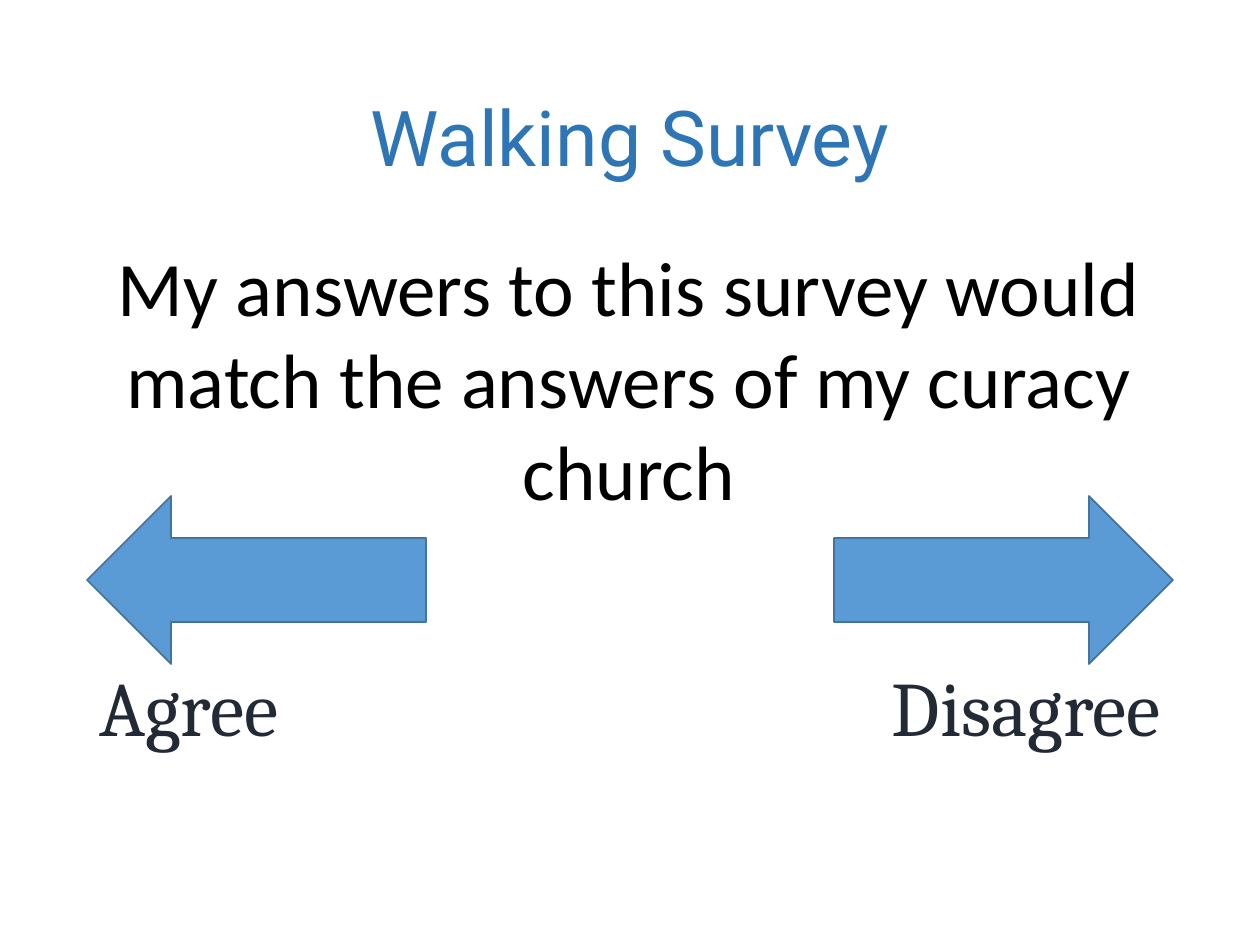
import pptx
import pptx.dml.color
import pptx.enum.shapes
import pptx.enum.text
import pptx.util

PX = 914400 / 126
RGB = pptx.dml.color.RGBColor
TITLE = RGB(0x2E, 0x75, 0xB6)
INK = RGB(0x22, 0x2A, 0x35)
BLACK = RGB(0x00, 0x00, 0x00)
BLUE = RGB(0x5B, 0x9B, 0xD5)
EDGE = RGB(0x43, 0x73, 0x9E)
ALIGN = pptx.enum.text.PP_ALIGN
ANCHOR = pptx.enum.text.MSO_ANCHOR


def scale(*box):
    """Turn px lengths into EMU."""
    return [pptx.util.Emu(round(n * PX)) for n in box]


def label(slide, box, text, face, color, align, lead=0.9, anchor=ANCHOR.TOP):
    """Place one wrapped line of text in a box."""
    frame = slide.shapes.add_textbox(*scale(*box)).text_frame
    frame.word_wrap = True
    frame.vertical_anchor = anchor
    para = frame.paragraphs[0]
    para.text = text
    para.alignment = align
    para.line_spacing = lead
    para.font.name = face
    para.font.size = pptx.util.Pt(44)
    para.font.color.rgb = color


def arrow(slide, box, turn):
    """Place a block arrow turned by some degrees."""
    kind = pptx.enum.shapes.MSO_SHAPE.RIGHT_ARROW
    shape = slide.shapes.add_shape(kind, *scale(*box))
    shape.rotation = turn
    shape.shadow.inherit = False
    shape.fill.solid()
    shape.fill.fore_color.rgb = BLUE
    shape.line.color.rgb = EDGE
    shape.line.width = pptx.util.Pt(1)


def heading(slide, x, y, w, h):
    """Place the title above the survey statement."""
    label(slide, (x, y, w, 183), "Walking Survey", "Roboto", TITLE,
          ALIGN.CENTER, anchor=ANCHOR.MIDDLE)
    text = "My answers to this survey would match the answers of my curacy church"
    label(slide, (x, y + 183, w - 2, h - 183), text, "Calibri", BLACK,
          ALIGN.CENTER, lead=1.0)


def choices(slide, x, y, w, h):
    """Place the two answers, each below its arrow, at the box edges."""
    wide, tall, span = 339, 168, 460
    sides = [("Agree", 0, 180, ALIGN.LEFT), ("Disagree", 1, 0, ALIGN.RIGHT)]
    for text, side, turn, align in sides:
        arrow(slide, (x + side * (w - wide), y, wide, tall), turn)
        label(slide, (x + side * (w - span), y + tall, span, h - tall),
              text, "Cambria", INK, align)


def main():
    """Build and save the slide."""
    deck = pptx.Presentation()
    deck.slide_width, deck.slide_height = scale(1260, 945)
    slide = deck.slides.add_slide(deck.slide_layouts[6])
    choices(slide, 87, 496, 1086, 374)
    heading(slide, 87, 50, 1086, 475)
    deck.save("out.pptx")


if __name__ == "__main__":
    main()
